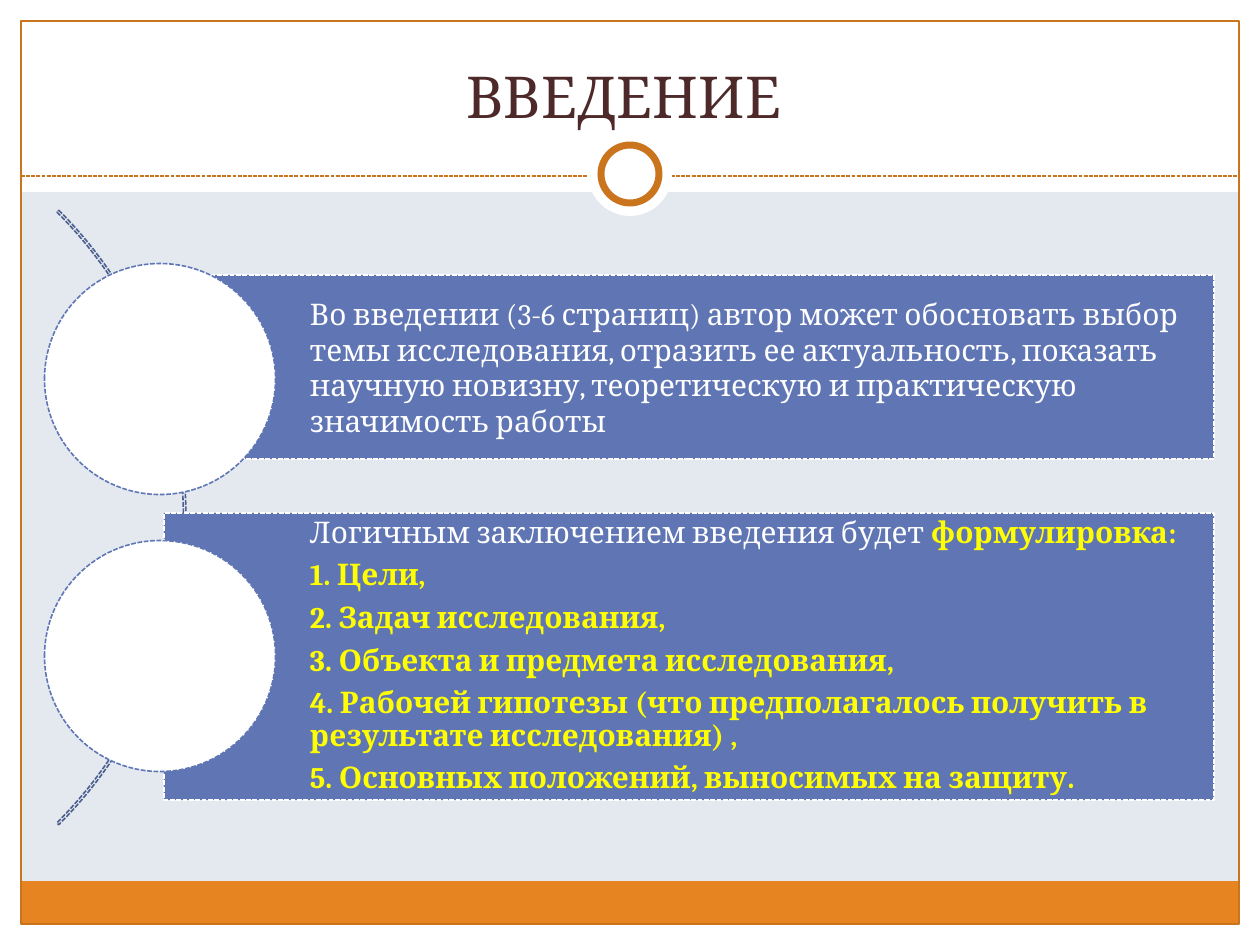
from lxml.etree import SubElement
from pptx import Presentation
from pptx.dml.color import RGBColor
from pptx.enum.dml import MSO_LINE
from pptx.enum.shapes import MSO_CONNECTOR, MSO_SHAPE as Kind
from pptx.enum.text import MSO_ANCHOR as Anchor, PP_ALIGN as Align
from pptx.oxml.ns import qn
from pptx.util import Emu, Pt

FONT = "Cambria"
WIDE, HIGH = 1260, 945
COLORS = {
    "back": "E4E9EF", "white": "FFFFFF", "orange": "E68422", "rust": "CB741E",
    "brown": "4E2929", "navy": "4D5E90", "blue": "6076B4", "yellow": "FFFF00",
}
INTRO = [[("Во введении (3-6 страниц) автор может обосновать выбор темы исследования, "
           "отразить ее актуальность, показать научную новизну, теоретическую и "
           "практическую значимость работы", "white")]]
GOALS = ["Цели,", "Задач исследования,", "Объекта и предмета исследования,",
         "Рабочей гипотезы (что предполагалось получить в результате исследования) ,",
         "Основных положений, выносимых на защиту."]
RESULT = [[("Логичным заключением введения будет ", "white"), ("формулировка:", "yellow")]]
RESULT += [[(f"{num}. {goal}", "yellow")] for num, goal in enumerate(GOALS, 1)]


def px(num):
    return Emu(round(num * 914400 / 126))


def color(name):
    return RGBColor.from_string(COLORS[name])


def stroke(line, name, width, dash=False):
    line.color.rgb = color(name)
    line.width = Pt(width)
    if dash:
        line.dash_style = MSO_LINE.SQUARE_DOT


def draw(slide, kind, box, fill=None, line=None, width=0.9, dash=False):
    shape = slide.shapes.add_shape(kind, *map(px, box))
    shape.shadow.inherit = False
    if fill:
        shape.fill.solid()
        shape.fill.fore_color.rgb = color(fill)
    else:
        shape.fill.background()
    if line:
        stroke(shape.line, line, width, dash)
    else:
        shape.line.fill.background()
    return shape


def disc(slide, x, y, size, **style):
    """Draw a white circle centred on x, y."""
    draw(slide, Kind.OVAL, (x - size / 2, y - size / 2, size, size), "white", **style)


def frame(slide, edge, head, foot):
    """Draw the white margins, the header, the footer bar and the border."""
    wide, high = WIDE - 2 * edge, HIGH - 2 * edge
    for box in ((0, HIGH - edge, WIDE, edge), (0, 0, WIDE, head),
                (0, 0, edge, HIGH), (WIDE - edge, 0, edge, HIGH)):
        draw(slide, Kind.RECTANGLE, box, "white")
    draw(slide, Kind.RECTANGLE, (edge, HIGH - edge - foot, wide, foot), "orange")
    draw(slide, Kind.RECTANGLE, (edge, edge, wide, high), line="rust", width=0.75)


def divider(slide, left, right, y):
    rule = slide.shapes.add_connector(
        MSO_CONNECTOR.STRAIGHT, px(left), px(y), px(right), px(y))
    stroke(rule.line, "rust", 0.75, dash=True)
    SubElement(rule._element.spPr, qn("a:effectLst"))
    mid = (left + right) / 2
    disc(slide, mid, y - 2, 84)
    disc(slide, mid, y - 2, 58, line="rust", width=4)


def heading(slide, box, text):
    title = slide.shapes.title
    slide.shapes._spTree.append(title._element)  # in front of the header
    title.left, title.top, title.width, title.height = map(px, box)
    title.text_frame.text = text
    title.text_frame.vertical_anchor = Anchor.BOTTOM
    para = title.text_frame.paragraphs[0]
    para.alignment = Align.CENTER
    para.font.name, para.font.size = FONT, Pt(33)
    para.font.color.rgb = color("brown")


def arc(slide, box):
    shape = draw(slide, Kind.BLOCK_ARC, box, line="navy", dash=True)
    for spot, value in enumerate((189, 27, 0.003)):
        shape.adjustments[spot] = value


def band(slide, box, mid, paras, space=1.0, after=0):
    """Draw a text bar and the circle over its left end, centred at height mid."""
    left = box[0]
    bar = draw(slide, Kind.RECTANGLE, box, "blue", "white", dash=True)
    body = bar.text_frame
    body.word_wrap = True
    body.vertical_anchor = Anchor.MIDDLE
    body.margin_left = px(146)
    body.margin_top = body.margin_right = body.margin_bottom = px(6)
    for spot, parts in enumerate(paras):
        para = body.add_paragraph() if spot else body.paragraphs[0]
        para.alignment = Align.LEFT
        para.line_spacing, para.space_after = space, Pt(after)
        para.font.name, para.font.size = FONT, Pt(17)
        for text, name in parts:
            run = para.add_run()
            run.text = text
            run.font.color.rgb = color(name)
            run.font.bold = name == "yellow"
    disc(slide, left - 4, mid, 231, line="blue", dash=True)


def main():
    deck = Presentation()
    deck.slide_width, deck.slide_height = px(WIDE), px(HIGH)
    slide = deck.slides.add_slide(deck.slide_layouts[5])
    slide.background.fill.solid()
    slide.background.fill.fore_color.rgb = color("back")
    frame(slide, edge=21, head=192, foot=43)
    divider(slide, 21, WIDE - 21, 176)
    heading(slide, (42, 31, 1176, 105), "ВВЕДЕНИЕ ")
    arc(slide, (-683, 83, 869, 869))
    band(slide, (164, 275, 1050, 184), 379, INTRO)
    band(slide, (164, 513, 1050, 287), 656, RESULT, space=0.9, after=6)
    deck.save("out.pptx")


if __name__ == "__main__":
    main()
